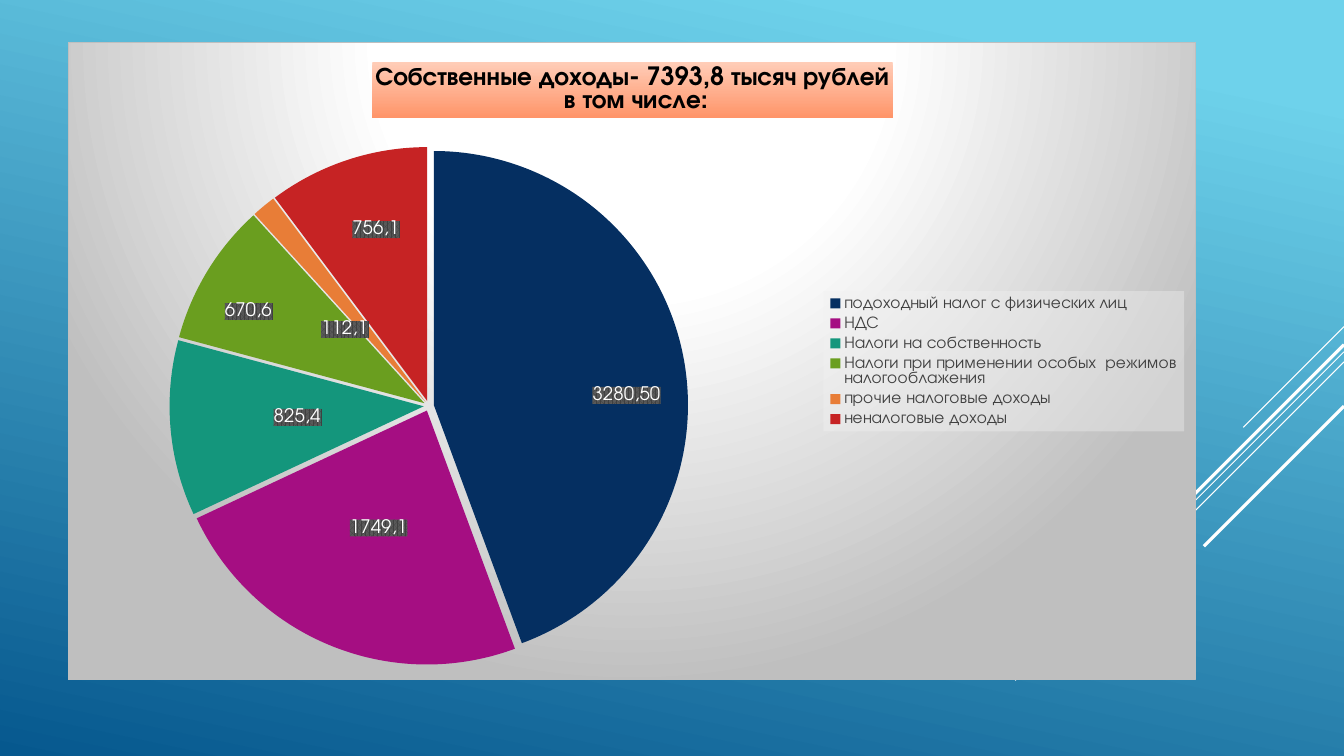
import dataclasses
import typing

import lxml.etree
import pptx
import pptx.chart.data
import pptx.dml.color
import pptx.enum.chart
import pptx.enum.shapes
import pptx.oxml
import pptx.oxml.ns
import pptx.util

RGB = pptx.dml.color.RGBColor
WHITE = RGB(0xFF, 0xFF, 0xFF)
BLACK = RGB(0, 0, 0)
GREY = RGB(0x40, 0x40, 0x40)
ASH = RGB(0x59, 0x59, 0x59)
SILVER = RGB(0xBF, 0xBF, 0xBF)
PALE = RGB(0xF2, 0xF2, 0xF2)
SKY = RGB(0x6E, 0xD2, 0xEB)
DEEP = RGB(0x06, 0x58, 0x8E)
PEACH = RGB(0xFF, 0xCD, 0xB8)
CORAL = RGB(0xFF, 0x94, 0x68)
NAVY = RGB(0x05, 0x2F, 0x61)
PLUM = RGB(0xA5, 0x0E, 0x82)
TEAL = RGB(0x14, 0x96, 0x7C)
GREEN = RGB(0x6A, 0x9E, 0x1F)
ORANGE = RGB(0xE8, 0x7D, 0x37)
RED = RGB(0xC6, 0x23, 0x24)

FACE = "TeX Gyre Adventor"
WIDE = pptx.util.Inches(13.33)
HIGH = pptx.util.Inches(7.5)
COL = WIDE / 100
ROW = HIGH / 100
CENTER = pptx.enum.chart.XL_LABEL_POSITION.CENTER
NS = pptx.oxml.ns.nsdecls("a", "c")
QN = pptx.oxml.ns.qn


@dataclasses.dataclass
class Ray:
    top: float
    span: float
    width: float


@dataclasses.dataclass
class Slice:
    name: str
    value: float
    label: str
    color: RGB
    shift: tuple[float, ...] = ()


RAYS = [
    Ray(3.24, 1, 0.75),
    Ray(3.49, 3.26, 0.75),
    Ray(3.59, 2.07, 0.75),
    Ray(3.42, 1.91, 2.25),
    Ray(4.03, 1.39, 2.25),
]
SLICES = [
    Slice("подоходный налог с физических лиц", 3280.5, "3280,50", NAVY, (0.06, 0.02)),
    Slice("НДС", 1749.1, "1749,1", PLUM),
    Slice("Налоги на собственность", 825.4, "825,4", TEAL),
    Slice("Налоги при применении особых  режимов налогооблажения", 670.6, "670,6",
          GREEN, (-0.06, -0.04)),
    Slice("прочие налоговые доходы", 112.1, "112,1", ORANGE, (0, 0.04)),
    Slice("неналоговые доходы", 756.1, "756,1", RED, (-0.01, -0.08)),
]
TITLE = ["Собственные доходы- 7393,8 тысяч рублей", " в том числе:"]


def style(item: typing.Any, size: float, color: RGB, bold: bool = False) -> None:
    form = {"name": FACE, "size": pptx.util.Pt(size), "bold": bold}
    for key, value in form.items():
        setattr(item, key, value)
    item.color.rgb = color


def place(area: tuple[float, ...], inner: bool = False,
          edge: bool = True) -> lxml.etree._Element:
    parts = '<c:layoutTarget val="inner"/>' if inner else ""
    if edge:
        parts += '<c:xMode val="edge"/><c:yMode val="edge"/>'
    parts += "".join(f'<c:{key} val="{share}"/>' for key, share in zip("xywh", area))
    return pptx.oxml.parse_xml(
        f"<c:layout {NS}><c:manualLayout>{parts}</c:manualLayout></c:layout>")


def strip(root: lxml.etree._Element) -> None:
    for old in root.findall(QN("c:layout")):
        root.remove(old)


def solid(color: RGB, alpha: int = 100) -> str:
    return (f'<a:solidFill><a:srgbClr val="{color}">'
            f'<a:alpha val="{alpha * 1000}"/></a:srgbClr></a:solidFill>')


def blend(stops: list[tuple[int, RGB]], way: str) -> str:
    marks = "".join(f'<a:gs pos="{pos * 1000}"><a:srgbClr val="{color}"/></a:gs>'
                    for pos, color in stops)
    return f"<a:gradFill><a:gsLst>{marks}</a:gsLst>{way}</a:gradFill>"


def weave(front: RGB, back: RGB) -> str:
    return (f'<a:pattFill prst="pct75"><a:fgClr><a:srgbClr val="{front}"/></a:fgClr>'
            f'<a:bgClr><a:srgbClr val="{back}"/></a:bgClr></a:pattFill>')


def paint(fill: str, edge: typing.Optional[RGB] = None) -> lxml.etree._Element:
    line = f'<a:ln w="9525">{solid(edge)}</a:ln>' if edge else "<a:ln><a:noFill/></a:ln>"
    return pptx.oxml.parse_xml(f"<c:spPr {NS}>{fill}{line}</c:spPr>")


def draw_back(slide: typing.Any) -> None:
    fill = slide.background.fill
    fill.gradient()
    fill.gradient_angle = 258
    for stop, (pos, color) in zip(fill.gradient_stops, [(0.1, SKY), (1, DEEP)]):
        stop.position = pos
        stop.color.rgb = color


def draw_ray(slide: typing.Any, ray: Ray) -> None:
    span = pptx.util.Inches(ray.span)
    top = pptx.util.Inches(ray.top)
    line = slide.shapes.add_connector(
        pptx.enum.shapes.MSO_CONNECTOR.STRAIGHT, WIDE, top, WIDE - span, top + span)
    line.line.color.rgb = WHITE
    line.line.width = pptx.util.Pt(ray.width)
    lxml.etree.SubElement(line._element.spPr, QN("a:effectLst"))


def draw_title(chart: typing.Any) -> None:
    frame = chart.chart_title.text_frame
    for index, text in enumerate(TITLE):
        para = frame.add_paragraph() if index else frame.paragraphs[0]
        run = para.add_run()
        run.text = text
        style(run.font, 18, BLACK, True)
    title = chart.chart_title._element
    strip(title)
    title.find(QN("c:tx")).addnext(place((0.27, 0.03)))
    fill = blend([(0, PEACH), (100, CORAL)], '<a:lin ang="5400000"/>')
    title.find(QN("c:overlay")).addnext(paint(fill))


def draw_legend(chart: typing.Any) -> None:
    chart.has_legend = True
    legend = chart.legend
    legend.position = pptx.enum.chart.XL_LEGEND_POSITION.RIGHT
    legend.include_in_layout = False
    style(legend.font, 12, GREY)
    root = legend._element
    strip(root)
    root.find(QN("c:legendPos")).addnext(place((0.67, 0.39, 0.32, 0.22)))
    root.find(QN("c:overlay")).addnext(paint(solid(PALE, 39)))


def draw_slice(series: typing.Any, index: int, part: Slice) -> None:
    point = series.points[index]
    point.format.fill.solid()
    point.format.fill.fore_color.rgb = part.color
    label = point.data_label
    run = label.text_frame.paragraphs[0].add_run()
    run.text = part.label
    style(run.font, 13.3, WHITE)
    label.position = CENTER
    root = series._element.find(QN("c:dLbls")).findall(QN("c:dLbl"))[index]
    root.find(QN("c:tx")).addnext(paint(weave(GREY, ASH)))
    root.find(QN("c:showPercent")).set("val", "1")
    if part.shift:
        root.find(QN("c:idx")).addnext(place(part.shift, edge=False))


def draw_labels(series: typing.Any) -> None:
    labels = series.data_labels
    form = {"show_value": True, "show_percentage": True, "position": CENTER,
            "number_format": "0.00", "number_format_is_linked": False}
    for key, value in form.items():
        setattr(labels, key, value)
    style(labels.font, 13.3, WHITE, True)


def draw_chart(slide: typing.Any) -> None:
    data = pptx.chart.data.CategoryChartData()
    data.categories = [part.name for part in SLICES]
    data.add_series("Series 1", [part.value for part in SLICES])
    chart = slide.shapes.add_chart(
        pptx.enum.chart.XL_CHART_TYPE.PIE, int(COL * 5.03), int(ROW * 5.6),
        int(COL * 83.95), int(ROW * 84.4), data).chart
    style(chart.font, 10, WHITE)
    draw_title(chart)
    draw_legend(chart)
    plot = chart.plots[0]
    plot.vary_by_categories = True
    series = plot.series[0]
    draw_labels(series)
    for index, part in enumerate(SLICES):
        draw_slice(series, index, part)
    burst = pptx.oxml.parse_xml(f'<c:explosion {NS} val="2"/>')
    series._element.find(QN("c:tx")).addnext(burst)
    root = chart._chartSpace.find(QN("c:chart"))
    area = root.find(QN("c:plotArea"))
    strip(area)
    area.insert(0, place((0.09, 0.16, 0.46, 0.82), True))
    way = ('<a:path path="circle"><a:fillToRect l="50000" t="-80000" '
           'r="50000" b="180000"/></a:path>')
    fill = blend([(0, WHITE), (39, WHITE), (100, SILVER)], way)
    root.addnext(paint(fill, SILVER))


def main() -> None:
    deck = pptx.Presentation()
    deck.slide_width, deck.slide_height = WIDE, HIGH
    slide = deck.slides.add_slide(deck.slide_layouts[6])
    draw_back(slide)
    for ray in RAYS:
        draw_ray(slide, ray)
    draw_chart(slide)
    deck.save("out.pptx")


if __name__ == "__main__":
    main()
